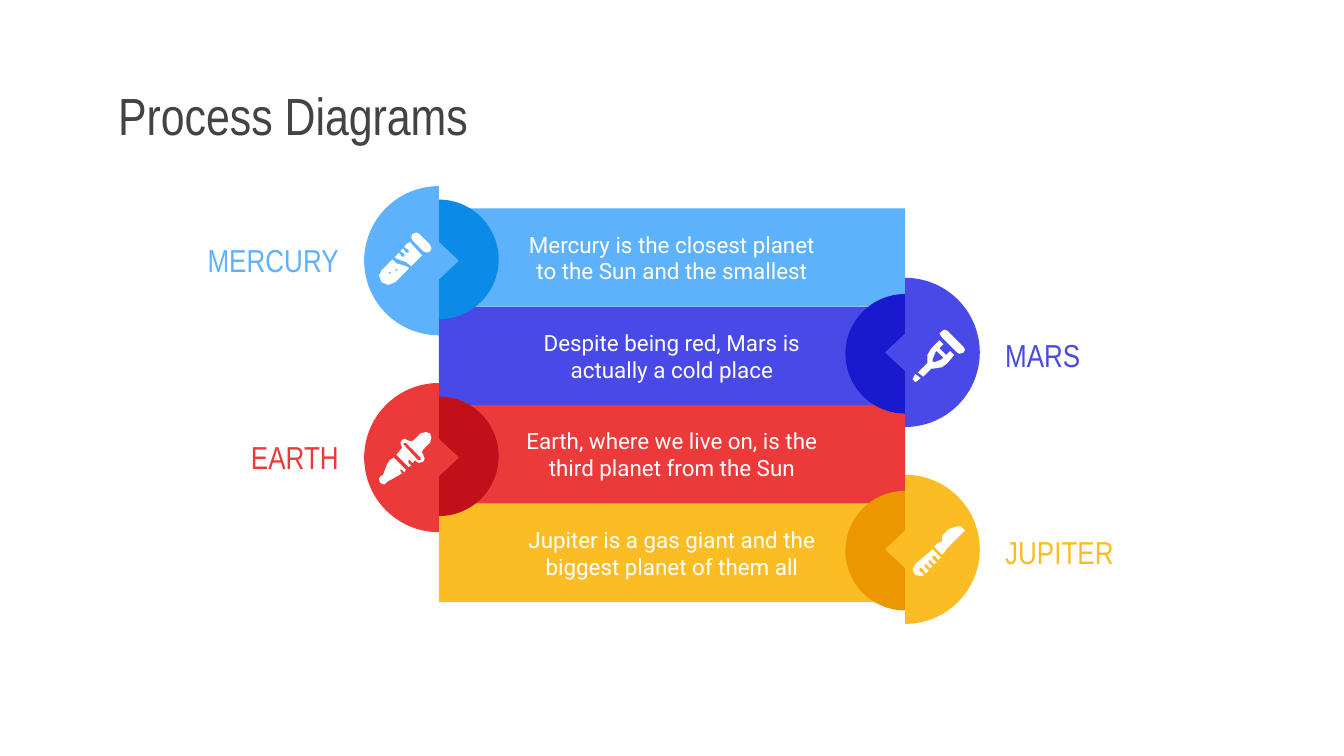
import math

import pptx
import pptx.util
import pptx.dml.color
import pptx.enum.shapes
import pptx.enum.text

Inches = pptx.util.Inches
RGB = pptx.dml.color.RGBColor
Kind = pptx.enum.shapes.MSO_SHAPE
Align = pptx.enum.text.PP_ALIGN

WHITE = RGB(0xFF, 0xFF, 0xFF)
GRAY = RGB(0x43, 0x43, 0x43)
SKY = RGB(0x5E, 0xB2, 0xFC)
BLUE = RGB(0x0C, 0x8A, 0xE8)
VIOLET = RGB(0x49, 0x49, 0xE7)
NAVY = RGB(0x19, 0x19, 0xCE)
RED = RGB(0xEC, 0x3A, 0x3B)
WINE = RGB(0xC1, 0x10, 0x19)
GOLD = RGB(0xFC, 0xBD, 0x24)
AMBER = RGB(0xED, 0x97, 0x00)

TUBE = [
    [[(28, -1), (25, 0), (24, 2), (25, 5), (33, 13), (36, 14), (38, 13), (39, 11), (38, 8), (30, 0)]],
    [[(10, 19), (2, 27), (0, 31), (2, 36), (7, 38), (12, 36), (22, 26), (22, 25), (17, 23), (13, 22)],
     [(13, 26), (14, 27), (13, 28), (12, 27)],
     [(8, 28), (9, 29), (8, 30), (7, 29)]],
    [[(23, 6), (20, 8), (19, 10), (22, 12), (22, 14), (20, 14), (18, 11), (16, 13), (19, 15),
      (19, 17), (17, 17), (15, 14), (12, 17), (12, 18), (17, 20), (20, 21), (24, 24), (32, 16)]],
]
CRUTCH = [
    [[(24, 3), (22, 4), (20, 6), (22, 9), (33, 20), (35, 21), (38, 20), (39, 18), (38, 16), (26, 4)]],
    [[(2, 36), (1, 38), (0, 40), (1, 41), (2, 42), (4, 41), (6, 39)]],
    [[(20, 11), (14, 17), (11, 22), (11, 28), (4, 35), (8, 38), (14, 32), (16, 32), (22, 31),
      (26, 28), (31, 22), (28, 19), (25, 22), (20, 17), (23, 14)],
     [(18, 19), (23, 24), (22, 25), (17, 27), (15, 27), (15, 25), (17, 20)]],
]
DROPPER = [
    [[(11, 20), (8, 22), (6, 25), (3, 33), (1, 34), (0, 36), (1, 39), (4, 40), (6, 38), (8, 37),
      (15, 33), (17, 32), (16, 30), (16, 29), (17, 29), (19, 31), (20, 29)]],
    [[(35, 1), (31, 2), (26, 7), (24, 8), (21, 7), (19, 6), (17, 7), (16, 9), (17, 12), (17, 13),
      (13, 18), (22, 27), (24, 26), (22, 24), (22, 22), (23, 22), (25, 24), (27, 22), (28, 23),
      (30, 24), (33, 23), (34, 21), (33, 18), (32, 16), (33, 14), (38, 9), (39, 5), (38, 2)],
     [(19, 9), (20, 9), (31, 20), (31, 22), (29, 22), (18, 10)]],
]
BRUSH = [
    [[(33, 3), (27, 5), (22, 10), (22, 14), (20, 15), (18, 16), (16, 18), (22, 24), (24, 22),
      (25, 20), (38, 7), (39, 6), (38, 5), (36, 3)]],
    [[(15, 20), (2, 31), (0, 35), (2, 39), (6, 40), (9, 39), (5, 36), (5, 34), (7, 34), (10, 38),
      (12, 36), (9, 33), (9, 31), (10, 31), (13, 34), (15, 33), (12, 30), (12, 28), (13, 28),
      (16, 31), (18, 30), (15, 27), (15, 25), (17, 25), (19, 28), (21, 26)]],
]

STEPS = [
    ("MERCURY", "Mercury is the closest planet to the Sun and the smallest", SKY, BLUE, TUBE),
    ("MARS", "Despite being red, Mars is actually a cold place", VIOLET, NAVY, CRUTCH),
    ("EARTH", "Earth, where we live on, is the third planet from the Sun", RED, WINE, DROPPER),
    ("JUPITER", "Jupiter is a gas giant and the biggest planet of them all", GOLD, AMBER, BRUSH),
]

PAGE = 10
TOP, END, WIDE = 1.55, 4.48, 3.47
PITCH = (END - TOP) / len(STEPS)
LEFT = (PAGE - WIDE) / 2
RIGHT = LEFT + WIDE
BIG, SMALL = 1.11 / 2, 0.89 / 2

deck = pptx.Presentation()
deck.slide_width, deck.slide_height = Inches(PAGE), Inches(PAGE * 9 / 16)
slide = deck.slides.add_slide(deck.slide_layouts[6])


def paint(shape, color):
    shape.shadow.inherit = False
    shape.fill.solid()
    shape.fill.fore_color.rgb = color
    shape.line.fill.background()


def block(kind, x, y, w, h, color):
    shape = slide.shapes.add_shape(kind, Inches(x), Inches(y), Inches(w), Inches(h))
    paint(shape, color)
    return shape


def trace(loops, color):
    first, *rest = [[(Inches(x), Inches(y)) for x, y in loop] for loop in loops]
    pen = slide.shapes.build_freeform(*first[0])
    pen.add_line_segments(first[1:])
    for loop in rest:
        pen.move_to(*loop[0])
        pen.add_line_segments(loop[1:])
    paint(pen.convert_to_shape(), color)


def write(shape, text, size, font, color, align=Align.LEFT, side=0.1):
    frame = shape.text_frame
    frame.word_wrap = True
    frame.vertical_anchor = pptx.enum.text.MSO_ANCHOR.MIDDLE
    frame.margin_left = frame.margin_right = Inches(side)
    frame.margin_top = frame.margin_bottom = Inches(0.1)
    para = frame.paragraphs[0]
    para.alignment = align
    run = para.add_run()
    run.text = text
    run.font.size = pptx.util.Pt(size)
    run.font.name = font
    run.font.color.rgb = color


def label(x, y, w, h):
    return slide.shapes.add_textbox(Inches(x), Inches(y), Inches(w), Inches(h))


def half(edge, mid, turn):
    arc = [math.radians(deg) for deg in range(-90, 91, 3)]
    curve = [(edge + turn * BIG * math.cos(a), mid + BIG * math.sin(a)) for a in arc]
    return curve + [(edge, mid + 0.14), (edge - turn * 0.15, mid), (edge, mid - 0.14)]


for row, (name, text, color, dark, icon) in enumerate(STEPS):
    bar = block(Kind.RECTANGLE, LEFT, TOP + row * PITCH, WIDE, PITCH, color)
    write(bar, text, 12, "Roboto", WHITE, align=Align.CENTER, side=0.6)

write(label(0.78, 0.59, 8.45, 0.53), "Process Diagrams", 28, "Arial Narrow", GRAY)

for row, (name, text, color, dark, icon) in enumerate(STEPS):
    if row % 2 == 0:
        edge, turn, drop, start, side, rise, align = LEFT, -1, 0.39, 2.82, 1.31, 0.15, Align.RIGHT
    else:
        edge, turn, drop, start, side, rise, align = RIGHT, 1, 0.34, 6.79, 7.38, 0.13, Align.LEFT
    mid = TOP + row * PITCH + drop
    block(Kind.OVAL, edge - SMALL, mid + turn * 0.01 - SMALL, 2 * SMALL, 2 * SMALL, dark)
    trace([half(edge, mid, turn)], color)
    for part in icon:
        trace([[(start + x / 100, mid - 0.2 + y / 100) for x, y in loop] for loop in part], WHITE)
    write(label(side, mid - rise, 1.31, 0.29), name, 17, "Arial Narrow", color, align=align)

deck.save("out.pptx")
